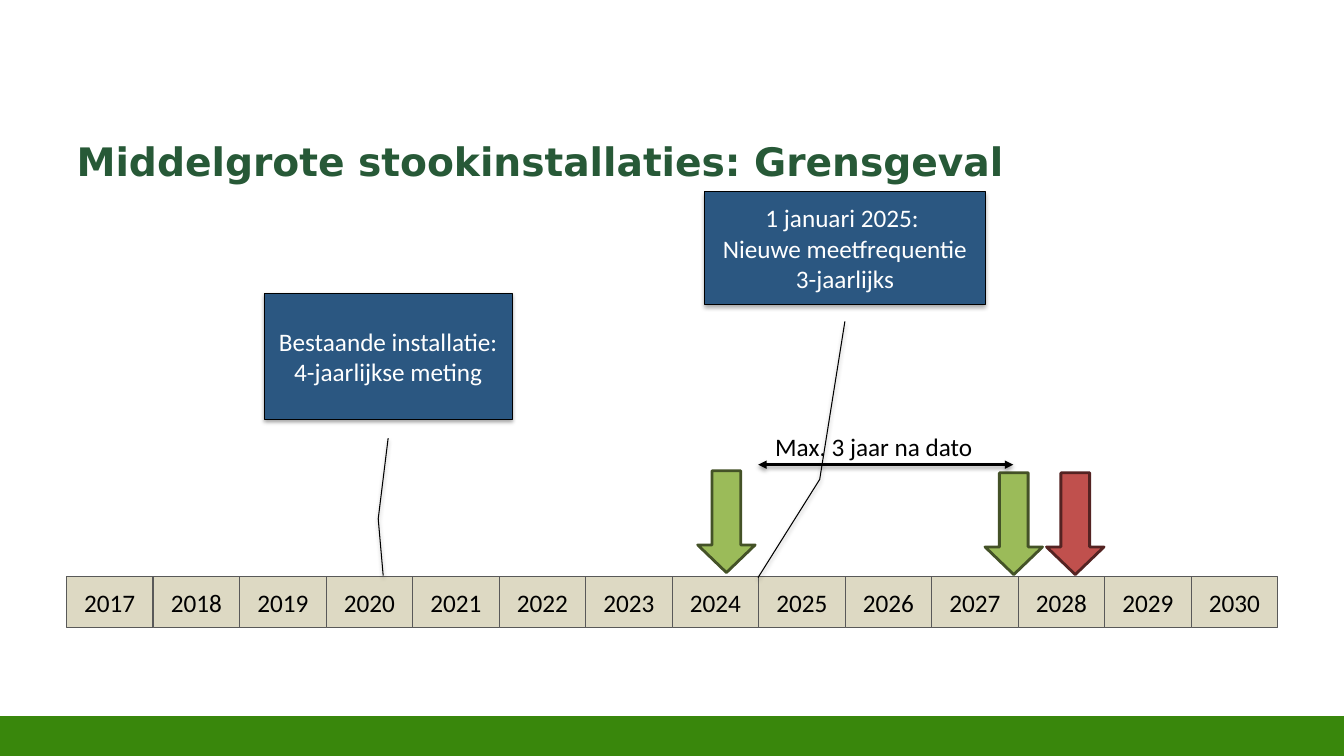
from dataclasses import dataclass

from lxml import etree
from pptx import Presentation
from pptx import util as u
from pptx.dml.color import RGBColor
from pptx.enum import shapes, text
from pptx.oxml import ns

GREEN = RGBColor(0x39, 0x87, 0x0C)
FOREST = RGBColor(0x27, 0x59, 0x37)
SAND = RGBColor(0xDD, 0xD9, 0xC3)
GREY = RGBColor(0x59, 0x59, 0x59)
BLUE = RGBColor(0x2B, 0x57, 0x81)
LIME = RGBColor(0x9B, 0xBB, 0x59)
MOSS = RGBColor(0x44, 0x52, 0x27)
RED = RGBColor(0xC0, 0x50, 0x4D)
WINE = RGBColor(0x54, 0x23, 0x22)
BLACK = RGBColor(0, 0, 0)
WHITE = RGBColor(0xFF, 0xFF, 0xFF)

KIND = shapes.MSO_SHAPE
LEFT, CENTER = text.PP_ALIGN.LEFT, text.PP_ALIGN.CENTER
TOP, MIDDLE = text.MSO_ANCHOR.TOP, text.MSO_ANCHOR.MIDDLE

FIRST, LAST = 2017, 2030
START, STEP = 0.66, 0.858


@dataclass
class Box:
    left: float
    top: float
    width: float
    height: float


@dataclass
class Callout:
    box: Box
    lines: list[str]
    bends: list[float]


@dataclass
class Arrow:
    left: float
    top: float
    fill: RGBColor
    edge: RGBColor


CALLOUTS = [
    Callout(Box(6.99, 1.9, 2.78, 1.12),
            ["1 januari 2025: \nNieuwe meetfrequentie 3-jaarlijks"],
            [1.15, 0.5, 2.55, 0.41, 3.42, 0.19]),
    Callout(Box(2.62, 2.91, 2.46, 1.25),
            ["Bestaande installatie:", "4-jaarlijkse meting"],
            [1.15, 0.5, 1.79, 0.46, 2.24, 0.48]),
]
ARROWS = [
    Arrow(6.92, 4.67, LIME, MOSS),
    Arrow(10.38, 4.69, RED, WINE),
    Arrow(9.77, 4.69, LIME, MOSS),
]


def place(box: Box) -> tuple:
    return tuple(u.Inches(n) for n in (box.left, box.top, box.width, box.height))


def write(shape, lines: list[str], *, size: float = 18, font: str = "Calibri",
          color: RGBColor = BLACK, bold: bool = False,
          align=CENTER, anchor=MIDDLE) -> None:
    frame = shape.text_frame
    frame.word_wrap = True
    frame.vertical_anchor = anchor
    for i, line in enumerate(lines):
        para = frame.add_paragraph() if i else frame.paragraphs[0]
        para.text = line
        para.alignment = align
        for run in para.runs:
            run.font.size = u.Pt(size)
            run.font.name = font
            run.font.bold = bold
            run.font.color.rgb = color


def draw(slide, kind, box: Box, fill: RGBColor, edge: RGBColor, weight: float):
    shape = slide.shapes.add_shape(kind, *place(box))
    shape.shadow.inherit = False
    shape.fill.solid()
    shape.fill.fore_color.rgb = fill
    shape.line.color.rgb = edge
    shape.line.width = u.Pt(weight)
    return shape


def shade(shape, alpha: int, drop: float) -> None:
    props = shape._element.spPr
    effects = props.find(ns.qn("a:effectLst"))
    if effects is None:
        effects = etree.SubElement(props, ns.qn("a:effectLst"))
    outer = etree.SubElement(effects, ns.qn("a:outerShdw"), blurRad=str(u.Pt(3.1)),
                             dist=str(u.Pt(drop)), dir="5400000", rotWithShape="0")
    color = etree.SubElement(outer, ns.qn("a:srgbClr"), val=str(BLACK))
    etree.SubElement(color, ns.qn("a:alpha"), val=str(alpha * 1000))


def add_title(slide) -> None:
    title = slide.shapes.title
    title.left, title.top, title.width, title.height = place(Box(0.66, 1.28, 12, 0.73))
    title.text_frame.margin_top = u.Inches(0.08)
    write(title, ["Middelgrote stookinstallaties: Grensgeval"], size=28,
          font="DejaVu Sans", color=FOREST, bold=True, align=LEFT, anchor=TOP)


def add_years(slide) -> None:
    for i, year in enumerate(range(FIRST, LAST + 1)):
        box = Box(START + i * STEP, 5.72, STEP, 0.51)
        write(draw(slide, KIND.RECTANGLE, box, SAND, GREY, 0.75), [str(year)])


def add_callout(slide, call: Callout) -> None:
    shape = draw(slide, KIND.LINE_CALLOUT_2, call.box, BLUE, BLACK, 0.75)
    for i, bend in enumerate(call.bends):
        shape.adjustments[i] = bend
    shade(shape, 35, 1.8)
    write(shape, call.lines, color=WHITE)


def add_arrow(slide, arrow: Arrow) -> None:
    box = Box(arrow.left, arrow.top, 0.57, 1.01)
    shape = draw(slide, KIND.DOWN_ARROW, box, arrow.fill, arrow.edge, 2)
    shape.adjustments[1] = 0.48


def add_span(slide) -> None:
    y = u.Inches(4.61)
    span = slide.shapes.add_connector(shapes.MSO_CONNECTOR.STRAIGHT,
                                      u.Inches(7.52), y, u.Inches(10.05), y)
    span.line.color.rgb = BLACK
    span.line.width = u.Pt(2)
    for end in ("a:headEnd", "a:tailEnd"):
        etree.SubElement(span.line._get_or_add_ln(), ns.qn(end), type="triangle")
    shade(span, 38, 1.6)
    label = slide.shapes.add_textbox(*place(Box(7.59, 4.23, 2.39, 0.4)))
    label.text_frame.auto_size = text.MSO_AUTO_SIZE.SHAPE_TO_FIT_TEXT
    write(label, ["Max. 3 jaar na dato"], align=LEFT, anchor=TOP)


def main() -> None:
    deck = Presentation()
    deck.slide_width, deck.slide_height = u.Inches(13.33), u.Inches(7.5)
    slide = deck.slides.add_slide(deck.slide_layouts[5])
    draw(slide, KIND.RECTANGLE, Box(0, 7.12, 13.33, 0.39), GREEN, GREEN, 2)
    add_title(slide)
    add_years(slide)
    for call in CALLOUTS:
        add_callout(slide, call)
    for arrow in ARROWS:
        add_arrow(slide, arrow)
    add_span(slide)
    deck.save("out.pptx")


if __name__ == "__main__":
    main()
